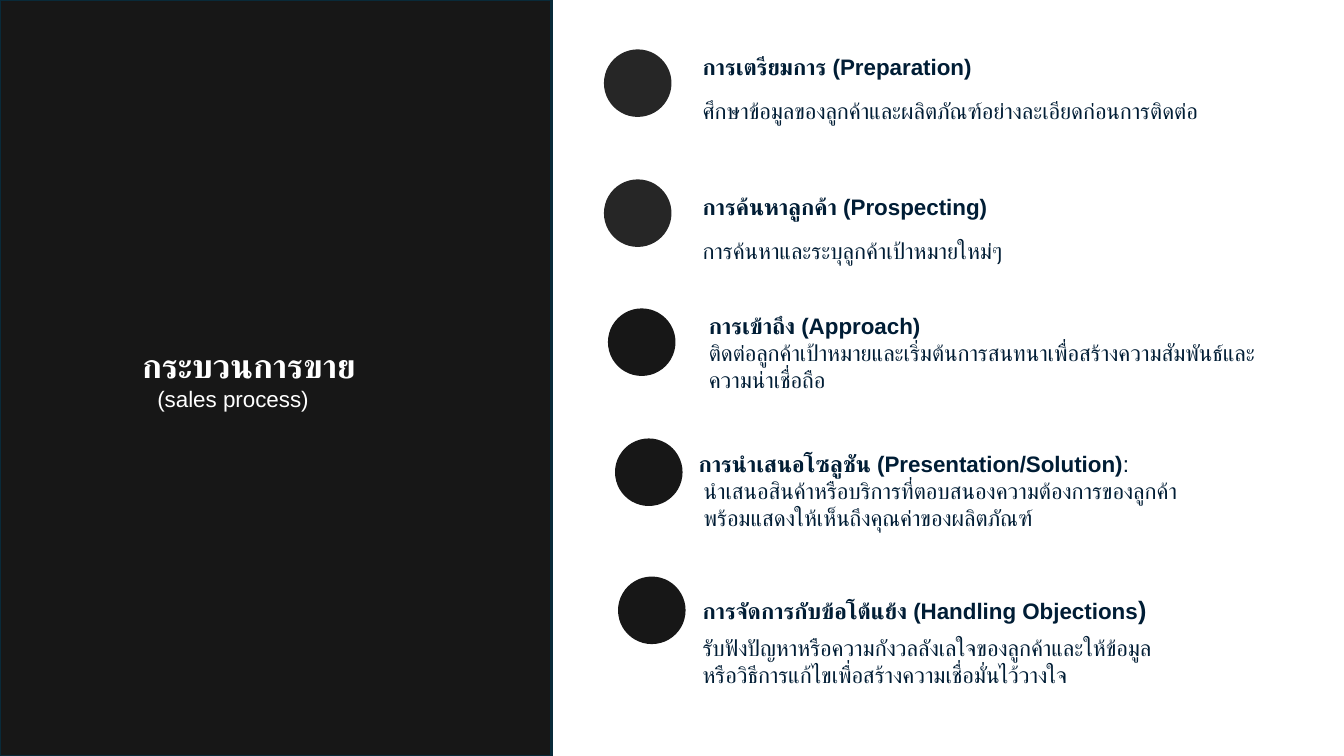
"""Build the sales process slide."""
from dataclasses import dataclass

from lxml import etree
from pptx import Presentation
from pptx.dml.color import RGBColor
from pptx.enum.shapes import MSO_SHAPE
from pptx.enum.text import MSO_ANCHOR, MSO_AUTO_SIZE, PP_ALIGN
from pptx.oxml.ns import qn
from pptx.util import Inches, Pt

OVAL = MSO_SHAPE.OVAL
LEFT = PP_ALIGN.LEFT
TOP, MIDDLE = MSO_ANCHOR.TOP, MSO_ANCHOR.MIDDLE
NO_FIT = MSO_AUTO_SIZE.NONE


@dataclass(frozen=True)
class Theme:
    """Hold the colours, font and type sizes of the slide."""
    panel: RGBColor = RGBColor.from_string("171717")
    panel_edge: RGBColor = RGBColor.from_string("092A39")
    soft_dot: RGBColor = RGBColor.from_string("262626")
    ink: RGBColor = RGBColor.from_string("001D35")
    white: RGBColor = RGBColor.from_string("FFFFFF")
    font: str = "Arial"
    title: Pt = Pt(24)
    large: Pt = Pt(18)
    text: Pt = Pt(16)


THEME = Theme()
AIRY = {"line_spacing": Pt(18), "space_before": Pt(7.5), "space_after": Pt(6)}
BOX_FRAME = {"word_wrap": True, "auto_size": NO_FIT, "vertical_anchor": TOP}
CENTRED_FRAME = {**BOX_FRAME, "vertical_anchor": MIDDLE,
                 "margin_left": 0, "margin_right": 0,
                 "margin_top": Inches(0.1), "margin_bottom": Inches(0.2)}
HEADING = {"bold": True}
PLAIN = {"bold": False}
DOT_SIZE = 0.67

STEPS = [
    {"dot": (5.99, 0.49), "tint": THEME.soft_dot,
     "box": (6.87, 0.49, 6.4, 0.81), "frame": BOX_FRAME,
     "heading": [("การเตรียมการ (Preparation)", HEADING)],
     "details": ["ศึกษาข้อมูลของลูกค้าและผลิตภัณฑ์อย่างละเอียดก่อนการติดต่อ"],
     "heading_spacing": AIRY, "detail_spacing": AIRY},
    {"dot": (5.99, 1.78), "tint": THEME.soft_dot,
     "box": (6.87, 1.88, 6.4, 0.81), "frame": BOX_FRAME,
     "heading": [("การค้นหาลูกค้า (Prospecting)", HEADING)],
     "details": ["การค้นหาและระบุลูกค้าเป้าหมายใหม่ๆ"],
     "heading_spacing": AIRY, "detail_spacing": AIRY},
    {"dot": (6.03, 3.06), "tint": THEME.panel,
     "box": (7.03, 2.69, 5.83, 1.71), "frame": CENTRED_FRAME,
     "heading": [("การเข้าถึง (Approach)", HEADING)],
     "details": ["ติดต่อลูกค้าเป้าหมายและเริ่มต้นการสนทนา"
                 "เพื่อสร้างความสัมพันธ์และความน่าเชื่อถือ"]},
    {"dot": (6.1, 4.35), "tint": THEME.panel,
     "box": (6.93, 4.06, 5.66, 1.71), "frame": CENTRED_FRAME,
     "heading": [("การนำเสนอโซลูชัน (Presentation/Solution)", HEADING),
                 (":", PLAIN)],
     "details": ["นำเสนอสินค้าหรือบริการที่ตอบสนองความต้องการของลูกค้า",
                 "พร้อมแสดงให้เห็นถึงคุณค่าของผลิตภัณฑ์"],
     "detail_indent": 0.05},
    {"dot": (6.13, 5.72), "tint": THEME.panel,
     "box": (6.87, 5.85, 6.4, 1.03), "frame": BOX_FRAME,
     "heading": [("การจัดการกับข้อโต้แย้ง (Handling Objections", HEADING),
                 (")", {"bold": True, "size": THEME.large})],
     "details": ["รับฟังปัญหาหรือความกังวลลังเลใจของลูกค้าและให้ข้อมูล",
                 "หรือวิธีการแก้ไขเพื่อสร้างความเชื่อมั่นไว้วางใจ"],
     "heading_spacing": {"space_after": Pt(6.5)}},
]


def apply_format(target, values):
    """Set every named attribute on the target."""
    for name, value in values.items():
        setattr(target, name, value)


def place(shape, box):
    """Move and size a shape to a box given in inches."""
    sides = ("left", "top", "width", "height")
    apply_format(shape, dict(zip(sides, map(Inches, box))))


def write_lines(frame, lines, colour):
    """Fill a text frame with lines of (runs, spacing, indent)."""
    for index, (runs, spacing, indent) in enumerate(lines):
        line = frame.add_paragraph() if index else frame.paragraphs[0]
        apply_format(line, {"alignment": LEFT, **spacing})
        if indent:
            line._p.get_or_add_pPr().set("marL", str(Inches(indent)))
        for words, look in runs:
            run = line.add_run()
            run.text = words
            run.font.color.rgb = colour
            apply_format(run.font, {"name": THEME.font, "size": THEME.text, **look})
            thai_font = etree.SubElement(run._r.get_or_add_rPr(), qn("a:cs"))
            thai_font.set("typeface", THEME.font)


def add_title_panel(slide, box):
    """Turn the title placeholder into the dark panel on the left."""
    panel = slide.shapes.title
    place(panel, box)
    panel.fill.solid()
    panel.fill.fore_color.rgb = THEME.panel
    panel.line.color.rgb = THEME.panel_edge
    panel.line.width = Pt(1.5)
    apply_format(panel.text_frame, {**BOX_FRAME, "vertical_anchor": MIDDLE})
    name = [("กระบวนการขาย", {"bold": True, "size": THEME.title})]
    translation = [("(sales process)", PLAIN)]
    write_lines(panel.text_frame,
                [(name, {}, 1.31), (translation, {}, 1.46)], THEME.white)


def add_step(slide, step):
    """Add the dot of one step and its heading with details."""
    dot = slide.shapes.add_shape(OVAL, 0, 0, 0, 0)
    place(dot, (*step["dot"], DOT_SIZE, DOT_SIZE))
    dot.shadow.inherit = False
    dot.fill.solid()
    dot.fill.fore_color.rgb = step["tint"]
    dot.line.fill.background()

    passage = slide.shapes.add_textbox(*map(Inches, step["box"]))
    apply_format(passage.text_frame, step["frame"])
    lines = [(step["heading"], step.get("heading_spacing", {}), 0)]
    lines += [([(detail, PLAIN)], step.get("detail_spacing", {}),
               step.get("detail_indent", 0)) for detail in step["details"]]
    write_lines(passage.text_frame, lines, THEME.ink)


def main():
    """Build and save the slide."""
    deck = Presentation()
    deck.slide_width, deck.slide_height = Inches(13.33), Inches(7.5)
    slide = deck.slides.add_slide(deck.slide_layouts.get_by_name("Title Only"))
    add_title_panel(slide, (0, 0, 5.47, 7.5))
    for step in STEPS:
        add_step(slide, step)
    deck.save("out.pptx")


if __name__ == "__main__":
    main()
